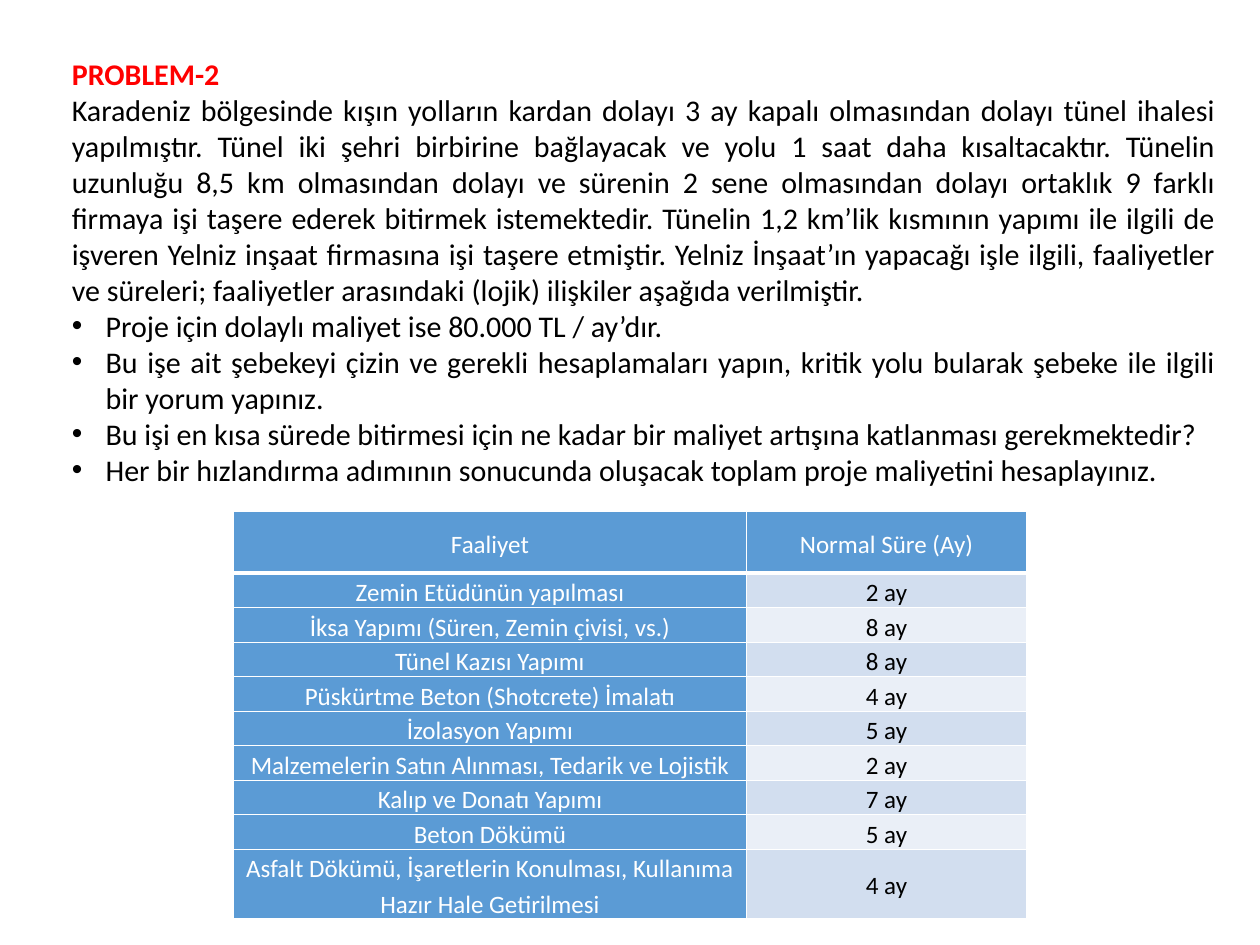
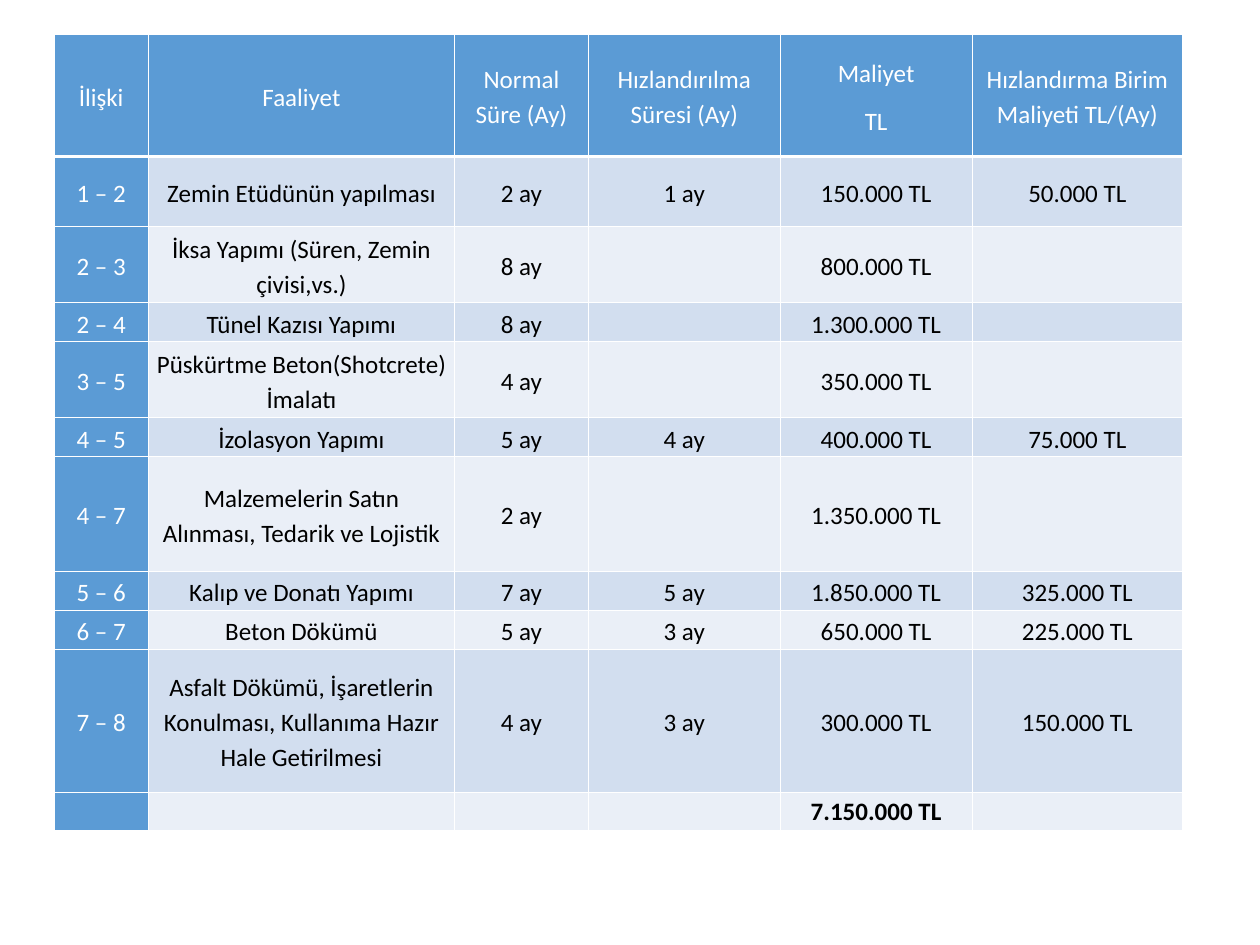
import pptx
import pptx.dml.color
import pptx.enum.text
import pptx.oxml
import pptx.oxml.ns
import pptx.util
from lxml import etree

Pt = pptx.util.Pt
RGBColor = pptx.dml.color.RGBColor
PP_ALIGN = pptx.enum.text.PP_ALIGN
MSO_ANCHOR = pptx.enum.text.MSO_ANCHOR
qn = pptx.oxml.ns.qn

FONT = "Calibri"
RED = RGBColor(0xFF, 0x00, 0x00)
BLACK = RGBColor(0x00, 0x00, 0x00)
WHITE = RGBColor(0xFF, 0xFF, 0xFF)
BLUE = RGBColor(0x5B, 0x9B, 0xD5)
BANDS = (RGBColor(0xD2, 0xDE, 0xEF), RGBColor(0xEA, 0xEF, 0xF7))

HEADING = "PROBLEM-2"
PROBLEM = (
    "Karadeniz bölgesinde kışın yolların kardan dolayı 3 ay kapalı olmasından dolayı "
    "tünel ihalesi yapılmıştır. Tünel iki şehri birbirine bağlayacak ve yolu 1 saat daha "
    "kısaltacaktır. Tünelin uzunluğu 8,5 km olmasından dolayı ve sürenin 2 sene olmasından "
    "dolayı ortaklık 9 farklı firmaya işi taşere ederek bitirmek istemektedir. Tünelin "
    "1,2 km’lik kısmının yapımı ile ilgili de işveren Yelniz inşaat firmasına işi taşere "
    "etmiştir. Yelniz İnşaat’ın yapacağı işle ilgili, faaliyetler ve süreleri; faaliyetler "
    "arasındaki (lojik) ilişkiler aşağıda verilmiştir."
)
QUESTIONS = [
    "Proje için dolaylı maliyet ise 80.000 TL / ay’dır.",
    "Bu işe ait şebekeyi çizin ve gerekli hesaplamaları yapın, kritik yolu bularak şebeke "
    "ile ilgili bir yorum yapınız.",
    "Bu işi en kısa sürede bitirmesi için ne kadar bir maliyet artışına katlanması gerekmektedir?",
    "Her bir hızlandırma adımının sonucunda oluşacak toplam proje maliyetini hesaplayınız.",
]
DURATIONS = [
    ("Faaliyet", "Normal Süre (Ay)"),
    ("Zemin Etüdünün yapılması", "2 ay"),
    ("İksa Yapımı (Süren, Zemin çivisi, vs.)", "8 ay"),
    ("Tünel Kazısı Yapımı", "8 ay"),
    ("Püskürtme Beton (Shotcrete) İmalatı", "4 ay"),
    ("İzolasyon Yapımı", "5 ay"),
    ("Malzemelerin Satın Alınması, Tedarik ve Lojistik", "2 ay"),
    ("Kalıp ve Donatı Yapımı", "7 ay"),
    ("Beton Dökümü", "5 ay"),
    ("Asfalt Dökümü, İşaretlerin Konulması, Kullanıma Hazır Hale Getirilmesi", "4 ay"),
]
COSTS = [
    ("İlişki", "Faaliyet", "Normal Süre (Ay)", "Hızlandırılma Süresi (Ay)", "Maliyet\nTL",
     "Hızlandırma Birim Maliyeti TL/(Ay)"),
    ("1 – 2", "Zemin Etüdünün yapılması", "2 ay", "1 ay", "150.000 TL", "50.000 TL"),
    ("2 – 3", "İksa Yapımı (Süren, Zemin çivisi,vs.)", "8 ay", "", "800.000 TL", ""),
    ("2 – 4", "Tünel Kazısı Yapımı", "8 ay", "", "1.300.000 TL", ""),
    ("3 – 5", "Püskürtme Beton(Shotcrete) İmalatı", "4 ay", "", "350.000 TL", ""),
    ("4 – 5", "İzolasyon Yapımı", "5 ay", "4 ay", "400.000 TL", "75.000 TL"),
    ("4 – 7", "Malzemelerin Satın Alınması, Tedarik ve Lojistik", "2 ay", "", "1.350.000 TL", ""),
    ("5 – 6", "Kalıp ve Donatı Yapımı", "7 ay", "5 ay", "1.850.000 TL", "325.000 TL"),
    ("6 – 7", "Beton Dökümü", "5 ay", "3 ay", "650.000 TL", "225.000 TL"),
    ("7 – 8", "Asfalt Dökümü, İşaretlerin Konulması, Kullanıma Hazır Hale Getirilmesi",
     "4 ay", "3 ay", "300.000 TL", "150.000 TL"),
    ("", "", "", "", "7.150.000 TL", ""),
]
DURATION_COLS = [411, 223.5]
DURATION_ROWS = [49.5] + [26.6] * 8 + [55.4]
COST_COLS = [75.5, 245, 107, 153.5, 153.5, 168.5]
COST_ROWS = [98, 56, 61, 31, 61, 31, 92, 31, 31, 114.5, 31]


def add_text(tf, text, size=24, color=BLACK, bold=False, align=PP_ALIGN.JUSTIFY,
             line=None, after=None, bullet=False):
    for part in text.split("\n"):
        p = tf.add_paragraph() if tf.paragraphs[0].runs else tf.paragraphs[0]
        p.alignment = align
        p.line_spacing = line
        if after is not None:
            p.space_after = Pt(after)
        if bullet:
            ppr = p._p.get_or_add_pPr()
            ppr.set("marL", str(Pt(27)))
            ppr.set("indent", str(-Pt(27)))
            etree.SubElement(ppr, qn("a:buFont")).set("typeface", "Arial")
            etree.SubElement(ppr, qn("a:buChar")).set("char", "•")
        r = p.add_run()
        r.text = part
        r.font.name = FONT
        r.font.size = Pt(size)
        r.font.bold = bold
        r.font.color.rgb = color


def add_borders(cell, top, bottom):
    tcpr = cell._tc.get_or_add_tcPr()
    for side, width in (("L", 1), ("R", 1), ("T", top), ("B", bottom)):
        ln = etree.SubElement(tcpr, qn("a:ln" + side), w=str(Pt(width)))
        fill = etree.SubElement(ln, qn("a:solidFill"))
        etree.SubElement(fill, qn("a:srgbClr")).set("val", str(WHITE))


def add_grid(s, rows, widths, heights, left, top):
    table = s.shapes.add_table(len(rows), len(widths), Pt(left), Pt(top),
                               Pt(sum(widths)), Pt(sum(heights))).table
    table.first_col = True
    for column, width in zip(table.columns, widths):
        column.width = Pt(width)
    for i, (values, height) in enumerate(zip(rows, heights)):
        table.rows[i].height = Pt(height)
        for j, text in enumerate(values):
            cell = table.cell(i, j)
            heading = i == 0 or j == 0
            total = values[0] == ""
            add_borders(cell, 3 if i == 1 else 1, 3 if i == 0 else 1)
            cell.fill.solid()
            cell.fill.fore_color.rgb = BLUE if heading else BANDS[(i - 1) % 2]
            cell.margin_left = cell.margin_right = Pt(5)
            cell.margin_top = cell.margin_bottom = 0
            cell.vertical_anchor = MSO_ANCHOR.TOP if total else MSO_ANCHOR.MIDDLE
            if text:
                add_text(cell.text_frame, text, size=20, color=WHITE if heading else BLACK,
                         bold=total, align=PP_ALIGN.CENTER, line=1.15, after=10)


def main():
    prs = pptx.Presentation()
    prs.slide_width, prs.slide_height = Pt(1008), Pt(756)
    blank = prs.slide_layouts[6]

    s = prs.slides.add_slide(blank)
    tf = s.shapes.add_textbox(Pt(50.4), Pt(41), Pt(929), Pt(385)).text_frame
    tf.word_wrap = True
    tf.auto_size = pptx.enum.text.MSO_AUTO_SIZE.SHAPE_TO_FIT_TEXT
    add_text(tf, HEADING, color=RED, bold=True)
    add_text(tf, PROBLEM)
    for question in QUESTIONS:
        add_text(tf, question, bullet=True)
    add_grid(s, DURATIONS, DURATION_COLS, DURATION_ROWS, 186.5, 409)

    s = prs.slides.add_slide(blank)
    add_grid(s, COSTS, COST_COLS, COST_ROWS, 43.2, 27.4)

    prs.save("out.pptx")


if __name__ == "__main__":
    main()
